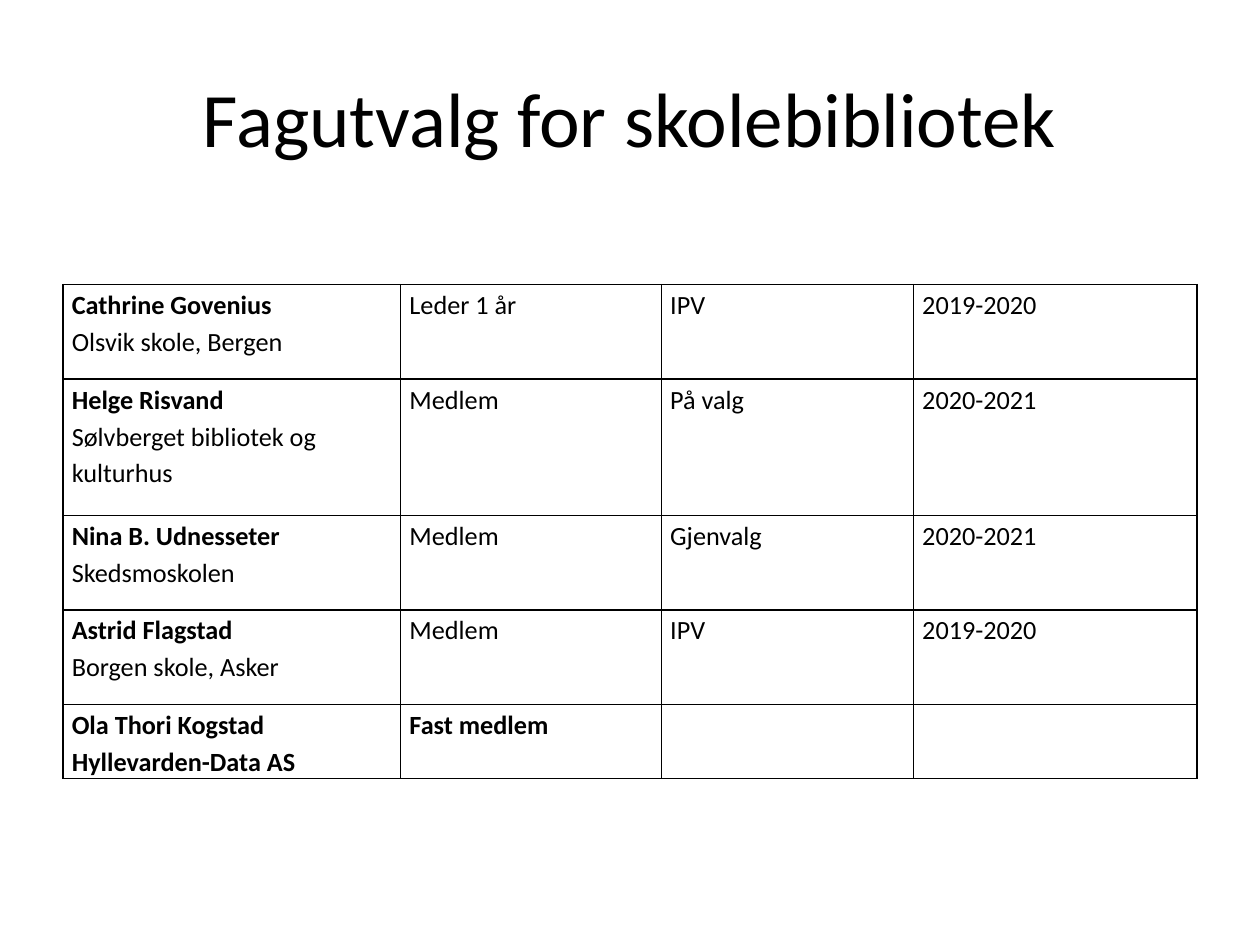
"""Build a slide listing the members of the school library committee."""
import pptx
import pptx.dml.color
import pptx.enum.text
import pptx.oxml
import pptx.oxml.ns
import pptx.util

Inches, Pt = pptx.util.Inches, pptx.util.Pt
BLACK = pptx.dml.color.RGBColor(0, 0, 0)
FONT = "Calibri"

TITLE = "Fagutvalg for skolebibliotek"
MEMBERS = [
    (["Cathrine Govenius", "Olsvik skole, Bergen"], "Leder 1 år", "IPV", "2019-2020"),
    (["Helge Risvand", "Sølvberget bibliotek og", "kulturhus"], "Medlem", "På valg", "2020-2021"),
    (["Nina B. Udnesseter", "Skedsmoskolen"], "Medlem", "Gjenvalg", "2020-2021"),
    (["Astrid Flagstad", "Borgen skole, Asker"], "Medlem", "IPV", "2019-2020"),
    (["Ola Thori Kogstad", "Hyllevarden-Data AS"], "Fast medlem", "", ""),
]
COLUMN_WIDTHS = [2.68, 2.07, 2, 2.25]
ROW_HEIGHTS = [0.75, 1.08, 0.75, 0.75, 0.59]
MARGIN = 0.5
TABLE_TOP = 2.26


def add_text(paragraph, text, size, bold=False):
    run = paragraph.add_run()
    run.text = text
    run.font.name, run.font.size, run.font.bold = FONT, Pt(size), bold
    run.font.color.rgb = BLACK


def add_borders(cell):
    properties = cell._tc.get_or_add_tcPr()
    for position, side in enumerate(("lnL", "lnR", "lnT", "lnB")):
        border = pptx.oxml.parse_xml(
            f'<a:{side} {pptx.oxml.ns.nsdecls("a")} w="{Pt(1)}"><a:solidFill>'
            f'<a:srgbClr val="{BLACK}"/></a:solidFill></a:{side}>')
        properties.insert(position, border)


def fill_cell(cell, lines, all_bold, first_bold):
    cell.fill.background()
    cell.margin_left = cell.margin_right = Inches(0.07)
    cell.margin_top = cell.margin_bottom = 0
    add_borders(cell)
    for index, line in enumerate(lines):
        frame = cell.text_frame
        paragraph = frame.add_paragraph() if index else frame.paragraphs[0]
        paragraph.line_spacing = 1.15
        if line:
            add_text(paragraph, line, 15, all_bold or (first_bold and index == 0))


def add_title(slide, width):
    title = slide.shapes.add_textbox(Inches(MARGIN), Inches(0.3), Inches(width), Inches(1.25))
    title.text_frame.word_wrap = True
    title.text_frame.vertical_anchor = pptx.enum.text.MSO_ANCHOR.MIDDLE
    heading = title.text_frame.paragraphs[0]
    heading.alignment = pptx.enum.text.PP_ALIGN.CENTER
    add_text(heading, TITLE, 44)


def add_members(slide, width):
    members = slide.shapes.add_table(
        len(MEMBERS), len(COLUMN_WIDTHS), Inches(MARGIN), Inches(TABLE_TOP),
        Inches(width), Inches(sum(ROW_HEIGHTS))).table
    members.first_row = members.horz_banding = False
    for column, column_width in zip(members.columns, COLUMN_WIDTHS):
        column.width = Inches(column_width)
    for row, height in zip(members.rows, ROW_HEIGHTS):
        row.height = Inches(height)
    for row, (person, *details) in enumerate(MEMBERS):
        permanent = row == len(MEMBERS) - 1
        for column, lines in enumerate([person] + [[detail] for detail in details]):
            fill_cell(members.cell(row, column), lines, permanent, column == 0)


def main():
    presentation = pptx.Presentation()
    presentation.slide_width, presentation.slide_height = Inches(10), Inches(7.5)
    slide = presentation.slides.add_slide(presentation.slide_layouts[6])
    width = sum(COLUMN_WIDTHS)
    add_title(slide, width)
    add_members(slide, width)
    presentation.save("out.pptx")


if __name__ == "__main__":
    main()
